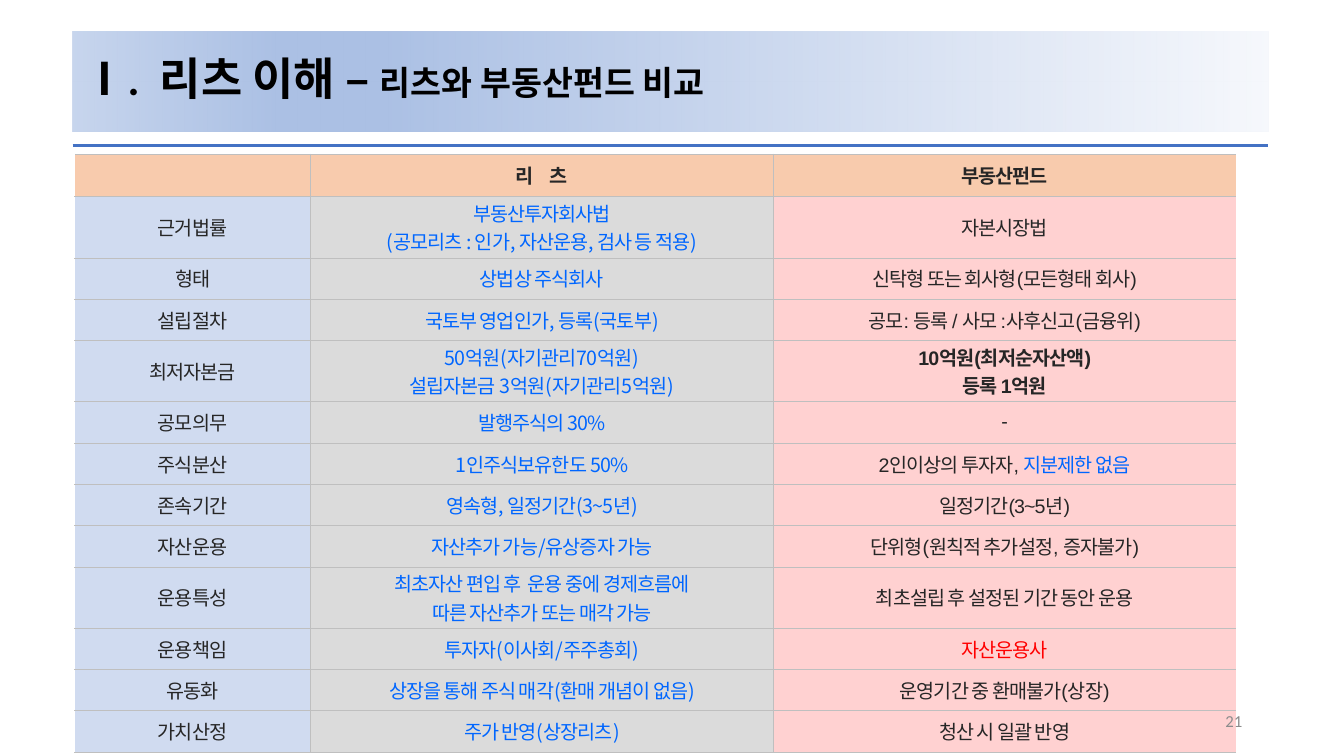
from dataclasses import dataclass

from lxml import etree
from pptx import Presentation
from pptx import util as u
from pptx.dml.color import RGBColor
from pptx.enum import shapes, text
from pptx.oxml import ns

Inches = u.Inches


@dataclass(frozen=True)
class Theme:
    korean: str = "Noto Sans CJK KR"
    latin: str = "Calibri"
    body: str = "Arial"
    title_size: int = 32
    subtitle_size: int = 24
    cell_size: int = 14
    number_size: int = 12
    black: str = "000000"
    ink: str = "262626"
    blue: str = "0066FF"
    red: str = "FF0000"
    gray: str = "8C8C8C"
    rule: str = "4472C4"
    border: str = "BFBFBF"
    white: str = "FFFFFF"
    header_fill: str = "F8CBAD"
    column_fills: tuple = ("D0DBF0", "DBDBDB", "FFD1D1")
    band: tuple = ((0, "F6F8FC", 97), (74, "ABC0E4", 100),
                   (83, "ABC0E4", 100), (100, "C7D5ED", 100))


THEME = Theme()
COLUMN_WIDTHS = (2.34, 4.59, 4.59)
HEADER = ("", "리 츠", "부동산펀드")
# A line feed starts a paragraph; a bar separates spans within one.
ROWS = (
    ("근거법률", "부동산투자회사법\n(공모리츠 : 인가, 자산운용, 검사 등 적용)", "자본시장법"),
    ("형태", "상법상 주식회사", "신탁형 또는 회사형(모든형태 회사)"),
    ("설립절차", "국토부 영업인가, 등록(국토부)", "공모: 등록 / 사모 :사후신고(금융위)"),
    ("최저자본금", "50억원(자기관리70억원)\n설립자본금 3억원(자기관리5억원)",
     "10억원(최저순자산액)\n등록 1억원"),
    ("공모의무", "발행주식의 30%", "-"),
    ("주식분산", "1인주식보유한도 50%", "2인이상의 투자자, |지분제한 없음"),
    ("존속기간", "영속형, 일정기간(3~5년)", "일정기간(3~5년)"),
    ("자산운용", "자산추가 가능/유상증자 가능", "단위형(원칙적 추가설정, 증자불가)"),
    ("운용특성", "최초자산 편입 후  운용 중에 경제흐름에\n따른 자산추가 또는 매각 가능",
     "최초설립 후 설정된 기간 동안 운용"),
    ("운용책임", "투자자(이사회/주주총회)", "자산운용사"),
    ("유동화", "상장을 통해 주식 매각(환매 개념이 없음)", "운영기간 중 환매불가(상장)"),
    ("가치산정", "주가 반영(상장리츠)", "청산 시 일괄 반영"),
)
EMPHASIS = {
    "지분제한 없음": {"color": THEME.blue},
    "자산운용사": {"color": THEME.red},
    "10억원(최저순자산액)": {"bold": True},
    "등록 1억원": {"bold": True},
}


def add_span(para, words, name, size, color, bold=False, spacing=0):
    """Add a run; spacing between letters is in points."""
    span = para.add_run()
    span.text = words
    formats = {"name": name, "size": u.Pt(size), "bold": bold}
    for key, value in formats.items():
        setattr(span.font, key, value)
    span.font.color.rgb = RGBColor.from_string(color)
    properties = span.font._element
    if spacing:
        properties.set("spc", str(round(spacing * 100)))
    etree.SubElement(properties, ns.qn("a:ea"), typeface=THEME.korean)


def add_color(parent, color, alpha=100):
    element = etree.SubElement(parent, ns.qn("a:srgbClr"), val=color)
    if alpha < 100:
        etree.SubElement(element, ns.qn("a:alpha"), val=str(alpha * 1000))


def fill_band(box):
    box.fill.gradient()
    box.fill.gradient_angle = 180
    stops = box._element.spPr.find(".//" + ns.qn("a:gsLst"))
    for stop in list(stops):
        stops.remove(stop)
    for position, color, alpha in THEME.band:
        stop = etree.SubElement(stops, ns.qn("a:gs"), pos=str(position * 1000))
        add_color(stop, color, alpha)


def add_heading(page, left, top, width, height):
    title = page.shapes.title
    place = {"left": left, "top": top, "width": width, "height": height}
    for key, value in place.items():
        setattr(title, key, Inches(value))
    fill_band(title)
    frame = title.text_frame
    formats = {"vertical_anchor": text.MSO_ANCHOR.MIDDLE, "word_wrap": True,
               "auto_size": text.MSO_AUTO_SIZE.NONE}
    for key, value in formats.items():
        setattr(frame, key, value)
    para = frame.paragraphs[0]
    para.alignment = text.PP_ALIGN.LEFT
    para.line_spacing = 0.9
    for words, name, size in (
            ("Ⅰ", THEME.korean, THEME.title_size),
            (".  리츠 이해 – ", THEME.latin, THEME.title_size),
            ("리츠와 부동산펀드 비교", THEME.latin, THEME.subtitle_size)):
        add_span(para, words, name, size, THEME.black, True)

    rule_top = Inches(top + height + 0.14)
    rule = page.shapes.add_connector(
        shapes.MSO_CONNECTOR.STRAIGHT, Inches(left), rule_top,
        Inches(left + width), rule_top)
    rule.line.color.rgb = RGBColor.from_string(THEME.rule)
    rule.line.width = u.Pt(2.25)
    etree.SubElement(rule._element.spPr, ns.qn("a:effectLst"))


def set_borders(cell, is_header, column):
    last = column == len(COLUMN_WIDTHS) - 1
    borders = {
        "a:lnL": (THEME.border, 0.25) if column else (THEME.white, 0.75),
        "a:lnR": None if last else (THEME.border, 0.25),
        "a:lnT": (THEME.border, 1 if is_header else 0.25),
        "a:lnB": (THEME.border, 0.25),
    }
    properties = cell._tc.get_or_add_tcPr()
    for index, (tag, style) in enumerate(borders.items()):
        line = etree.Element(ns.qn(tag))
        if style:
            color, points = style
            line.set("w", str(u.Pt(points)))
            add_color(etree.SubElement(line, ns.qn("a:solidFill")), color)
        else:
            etree.SubElement(line, ns.qn("a:noFill"))
        properties.insert(index, line)


def fill_cell(cell, words, is_header, column):
    cell.fill.solid()
    fill = THEME.header_fill if is_header else THEME.column_fills[column]
    cell.fill.fore_color.rgb = RGBColor.from_string(fill)
    cell.vertical_anchor = text.MSO_ANCHOR.MIDDLE
    for side in ("left", "top", "right", "bottom"):
        setattr(cell, f"margin_{side}", Inches(0.02))
    set_borders(cell, is_header, column)

    reits = column == 1
    style = {"name": THEME.korean if reits else THEME.body,
             "size": THEME.cell_size, "spacing": -0.7, "bold": is_header,
             "color": THEME.blue if reits and not is_header else THEME.ink}
    if is_header and reits:
        style["spacing"] = 4
    frame = cell.text_frame
    for index, line in enumerate(words.split("\n")):
        para = frame.add_paragraph() if index else frame.paragraphs[0]
        para.alignment = text.PP_ALIGN.CENTER
        for part in filter(None, line.split("|")):
            add_span(para, part, **{**style, **EMPHASIS.get(part, {})})


def add_comparison(page, left, top):
    lines = (HEADER,) + ROWS
    heights = [0.48 if any("\n" in words for words in line) else 0.41
               for line in lines]
    heights[0] = 0.42
    table = page.shapes.add_table(
        len(lines), len(COLUMN_WIDTHS), Inches(left), Inches(top),
        Inches(sum(COLUMN_WIDTHS)), Inches(sum(heights))).table
    table.horz_banding = False
    for column, width in zip(table.columns, COLUMN_WIDTHS):
        column.width = Inches(width)
    for row, (line, height) in enumerate(zip(lines, heights)):
        table.rows[row].height = Inches(height)
        for column, words in enumerate(line):
            fill_cell(table.cell(row, column), words, row == 0, column)


def add_page_number(page, left, top, width, height):
    box = page.shapes.add_textbox(*map(Inches, (left, top, width, height)))
    frame = box.text_frame
    frame.word_wrap = True
    frame.vertical_anchor = text.MSO_ANCHOR.MIDDLE
    para = frame.paragraphs[0]
    para.alignment = text.PP_ALIGN.RIGHT
    add_span(para, "21", THEME.latin, THEME.number_size, THEME.gray)


def main():
    deck = Presentation()
    deck.slide_width, deck.slide_height = Inches(13.33), Inches(7.5)
    page = deck.slides.add_slide(deck.slide_layouts.get_by_name("Title Only"))
    add_heading(page, 0.72, 0.31, 11.86, 0.99)
    add_comparison(page, 0.74, 1.53)
    add_page_number(page, 9.42, 6.95, 3, 0.4)
    deck.save("out.pptx")


if __name__ == "__main__":
    main()
